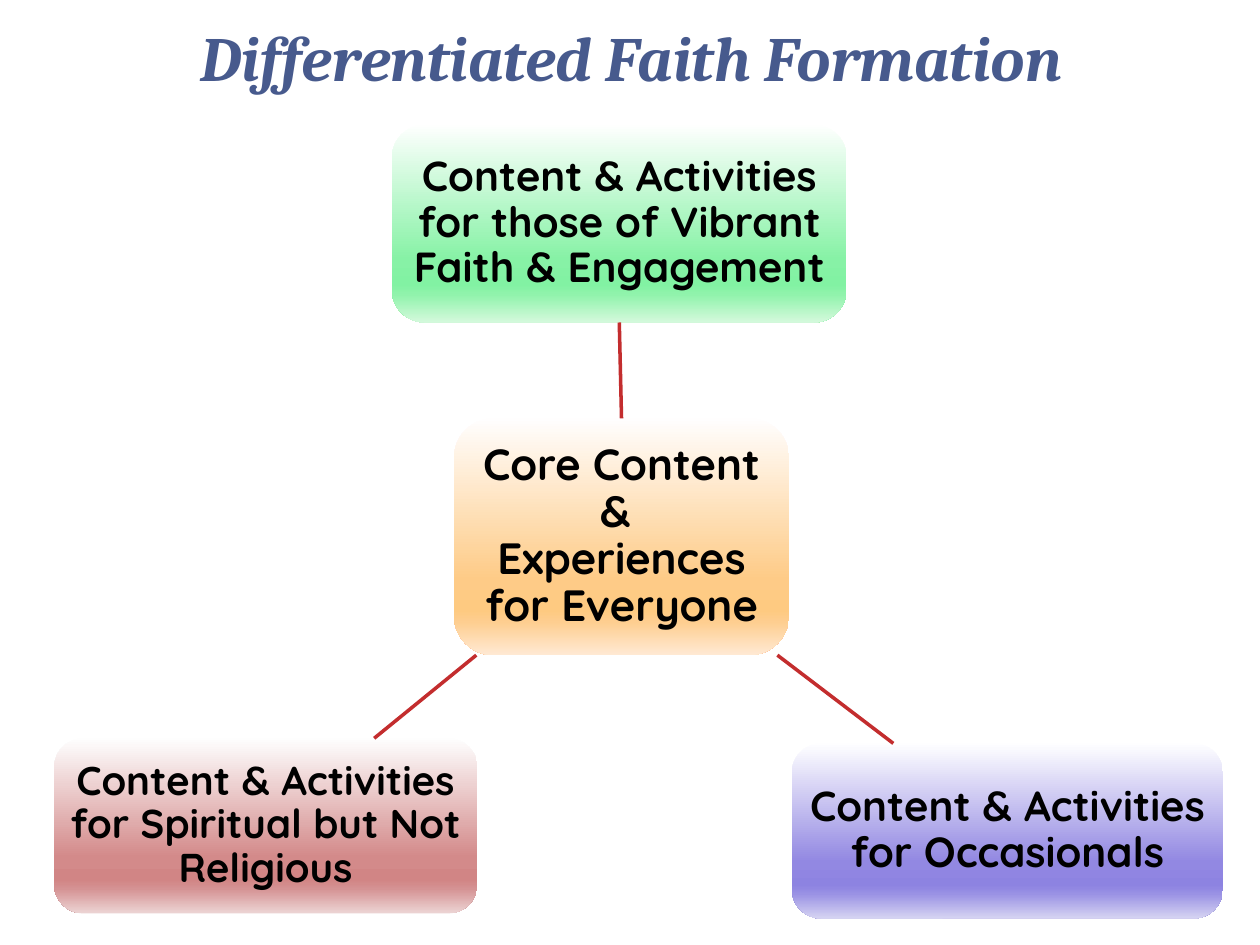
from pptx import Presentation
from pptx.dml.color import RGBColor as RGB
from pptx.enum.shapes import MSO_CONNECTOR as LINE, MSO_SHAPE as SHAPE
from pptx.enum.text import MSO_ANCHOR as ANCHOR, PP_ALIGN as ALIGN
from pptx.oxml import parse_xml
from pptx.oxml.ns import nsdecls, qn
from pptx.util import Inches, Pt

COLORS = {
    "panel": "FFFFFF",
    "title": "475A8D",
    "text": "000000",
    "link": "C32D2E",
    "core": ["FFFEFE", "FECB87", "FECA81", "FECE90", "FFE9D3"],
    "vibrant": ["FEFFFE", "87F2A6", "82F2A3", "91F3AC", "D4F9DC"],
    "occasional": ["FEFEFF", "9288E2", "8D83E1", "9A92E4", "D6D4F2"],
    "spiritual": ["FEFEFE", "D38A8A", "D18585", "D59394", "ECD4D4"],
}
STOPS = [0, 68, 81, 86, 100]

deck = Presentation()
deck.slide_width, deck.slide_height = Inches(10), Inches(7.5)
slide = deck.slides.add_slide(deck.slide_layouts[6])


def share(*percents):
    sides = (deck.slide_width, deck.slide_height)
    return [int(sides[i % 2] * p / 100) for i, p in enumerate(percents)]


def write(frame, wording, color, **font_format):
    frame.word_wrap = True
    paragraph = frame.paragraphs[0]
    paragraph.text = wording
    paragraph.alignment = ALIGN.CENTER
    for run in paragraph.runs:
        for name, value in font_format.items():
            setattr(run.font, name, value)
        run.font.color.rgb = RGB.from_string(color)
    return paragraph


panel = slide.shapes.add_shape(SHAPE.ROUNDED_RECTANGLE, *share(1, 1.47, 98, 97.2))
panel.adjustments[0] = 0.02
panel.shadow.inherit = False
panel.line.fill.background()
panel.fill.solid()
panel.fill.fore_color.rgb = RGB.from_string(COLORS["panel"])

audiences = [
    ("core", (36.03, 44.27, 26.6, 25.07), 25,
     "Core Content & \vExperiences for Everyone"),
    ("vibrant", (31.1, 13.2, 36.1, 20.93), 24,
     "Content & Activities for those of Vibrant Faith & Engagement"),
    ("occasional", (62.85, 78.67, 34.2, 18.53), 24,
     "Content & Activities for Occasionals"),
    ("spiritual", (4.3, 78.13, 33.6, 18.53), 23,
     "Content & Activities for Spiritual but Not Religious"),
]
boxes = {}
for audience, place, size, wording in audiences:
    box = slide.shapes.add_shape(SHAPE.ROUNDED_RECTANGLE, *share(*place))
    box.shadow.inherit = False
    box.line.fill.background()
    box.fill.gradient()
    box.fill.gradient_angle = 270
    stop_list = box.fill.gradient_stops[0]._gs.getparent()
    for stop in list(stop_list):
        stop_list.remove(stop)
    for position, color in zip(STOPS, COLORS[audience]):
        stop_list.append(parse_xml(
            f'<a:gs {nsdecls("a")} pos="{position * 1000}">'
            f'<a:srgbClr val="{color}"/></a:gs>'))
    frame = box.text_frame
    frame.vertical_anchor = ANCHOR.MIDDLE
    for side in ("left", "top", "right", "bottom"):
        setattr(frame, f"margin_{side}", Inches(0.06))
    write(frame, wording, COLORS["text"], name="Quicksand",
          size=Pt(size), bold=True).line_spacing = 0.9
    boxes[audience] = box

links = {
    "vibrant": (49.3, 44.27, 49.15, 34.13),
    "occasional": (61.7, 69.33, 70.9, 78.67),
    "spiritual": (37.8, 69.33, 29.7, 78.13),
}
for audience, ends in links.items():
    link = slide.shapes.add_connector(LINE.STRAIGHT, *share(*ends))
    link.line.color.rgb = RGB.from_string(COLORS["link"])
    link.line.width = Pt(2)
    link._element.spPr.append(link._element.makeelement(qn("a:effectLst"), {}))
    if audience == "vibrant":
        link.begin_connect(boxes["core"], 0)
        link.end_connect(boxes["vibrant"], 2)

title = slide.shapes.add_textbox(*share(10.7, 1.27, 78.8, 9.47))
write(title.text_frame, "Differentiated Faith Formation", COLORS["title"],
      name="Cambria", size=Pt(36), bold=True, italic=True)

deck.save("out.pptx")
